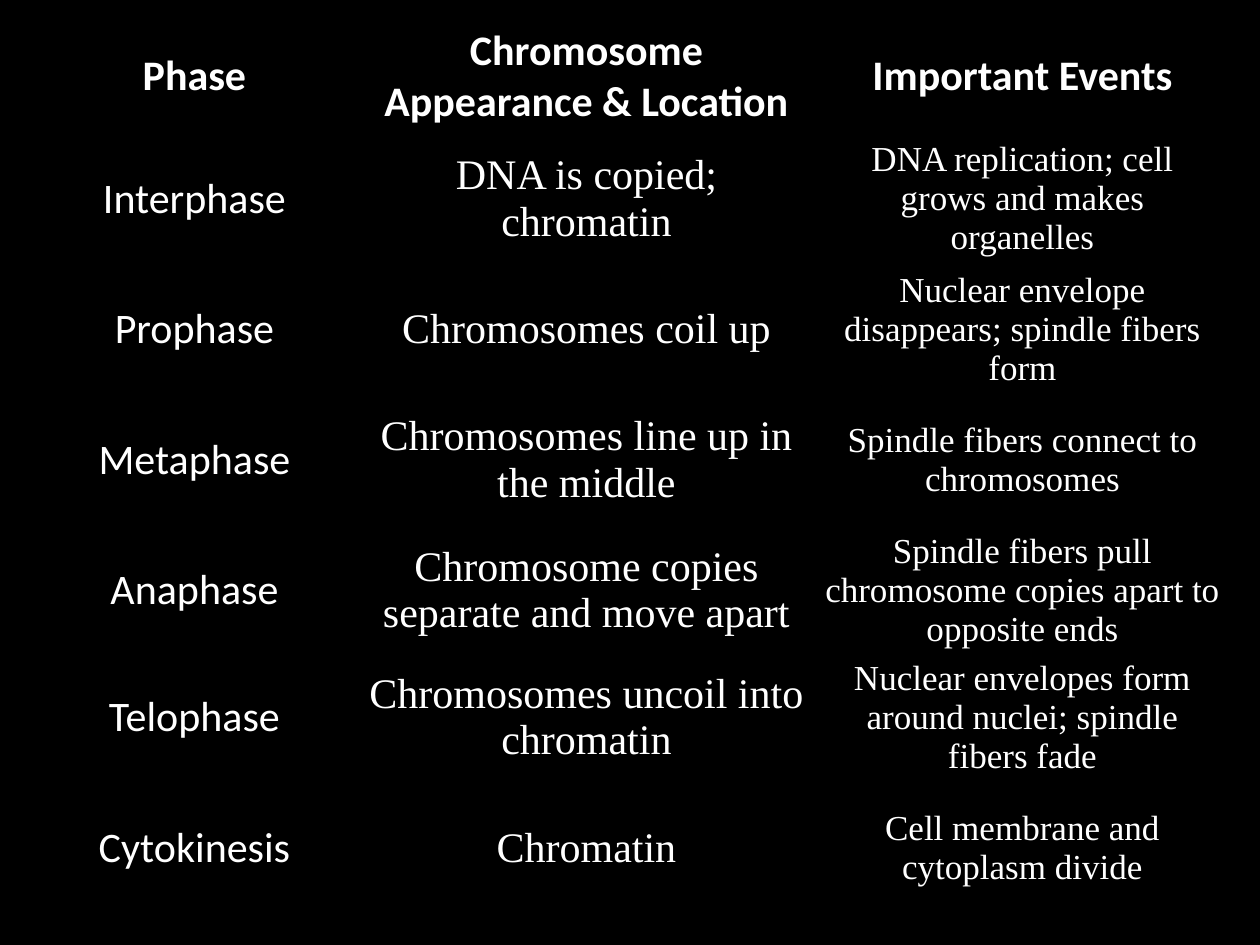
"""Build a slide with a table of the phases of the cell cycle."""
from typing import NamedTuple

from lxml import etree
from pptx import Presentation
from pptx.dml.color import RGBColor
from pptx.enum.text import MSO_ANCHOR, PP_ALIGN
from pptx.oxml.ns import qn
from pptx.util import Pt

CENTER = PP_ALIGN.CENTER
MIDDLE = MSO_ANCHOR.MIDDLE
BLACK = RGBColor(0x00, 0x00, 0x00)
WHITE = RGBColor(0xFF, 0xFF, 0xFF)
SANS = "Calibri"
SERIF = "Times New Roman"
SCALE = 914400 / 126
LEFT, TOP = 32, 21
PAD = 9
ROWS = (111, 134, 127, 134, 127, 127, 134)


class Column(NamedTuple):
    title: str
    width: int
    font: str
    size: int


class Phase(NamedTuple):
    name: str
    look: str
    events: str


COLUMNS = (
    Column("Phase", 325, SANS, 24),
    Column("Chromosome Appearance & Location", 459, SERIF, 24),
    Column("Important Events", 413, SERIF, 20),
)
PHASES = (
    Phase("Interphase", "DNA is copied; chromatin",
          "DNA replication; cell grows and makes organelles"),
    Phase("Prophase", "Chromosomes coil up",
          "Nuclear envelope disappears; spindle fibers form"),
    Phase("Metaphase", "Chromosomes line up in the middle",
          "Spindle fibers connect to chromosomes"),
    Phase("Anaphase", "Chromosome copies separate and move apart",
          "Spindle fibers pull chromosome copies apart to opposite ends"),
    Phase("Telophase", "Chromosomes uncoil into chromatin",
          "Nuclear envelopes form around nuclei; spindle fibers fade"),
    Phase("Cytokinesis", "Chromatin", "Cell membrane and cytoplasm divide"),
)


def emu(px: int) -> int:
    return round(px * SCALE)


def border(cell, color: RGBColor, width: int) -> None:
    props = cell._tc.get_or_add_tcPr()
    for place, side in enumerate(("lnL", "lnR", "lnT", "lnB")):
        line = etree.Element(qn(f"a:{side}"), w=str(Pt(width)))
        fill = etree.SubElement(line, qn("a:solidFill"))
        etree.SubElement(fill, qn("a:srgbClr"), val=str(color))
        props.insert(place, line)


def write(cell, text: str, *, font: str, size: int, bold: bool = False) -> None:
    cell.vertical_anchor = MIDDLE
    cell.margin_left = cell.margin_right = emu(PAD)
    cell.margin_top = cell.margin_bottom = 0
    para = cell.text_frame.paragraphs[0]
    para.alignment = CENTER
    run = para.add_run()
    run.text = text
    run.font.name = font
    run.font.size = Pt(size)
    run.font.bold = bold
    run.font.color.rgb = WHITE


def add_grid(slide) -> None:
    width = sum(column.width for column in COLUMNS)
    frame = slide.shapes.add_table(len(ROWS), len(COLUMNS), emu(LEFT), emu(TOP),
                                   emu(width), emu(sum(ROWS)))
    table = frame.table
    table.first_row = table.horz_banding = False
    for row, height in zip(table.rows, ROWS):
        row.height = emu(height)
    for index, column in enumerate(COLUMNS):
        table.columns[index].width = emu(column.width)
        write(table.cell(0, index), column.title, font=SANS, size=24, bold=True)
        for row, phase in enumerate(PHASES, 1):
            write(table.cell(row, index), phase[index],
                  font=column.font, size=column.size)
    for cell in table.iter_cells():
        cell.fill.solid()
        cell.fill.fore_color.rgb = BLACK
        border(cell, BLACK, 1)


def main() -> None:
    deck = Presentation()
    deck.slide_width, deck.slide_height = emu(1260), emu(945)
    slide = deck.slides.add_slide(deck.slide_layouts[6])
    slide.background.fill.solid()
    slide.background.fill.fore_color.rgb = BLACK
    add_grid(slide)
    deck.save("out.pptx")


if __name__ == "__main__":
    main()
